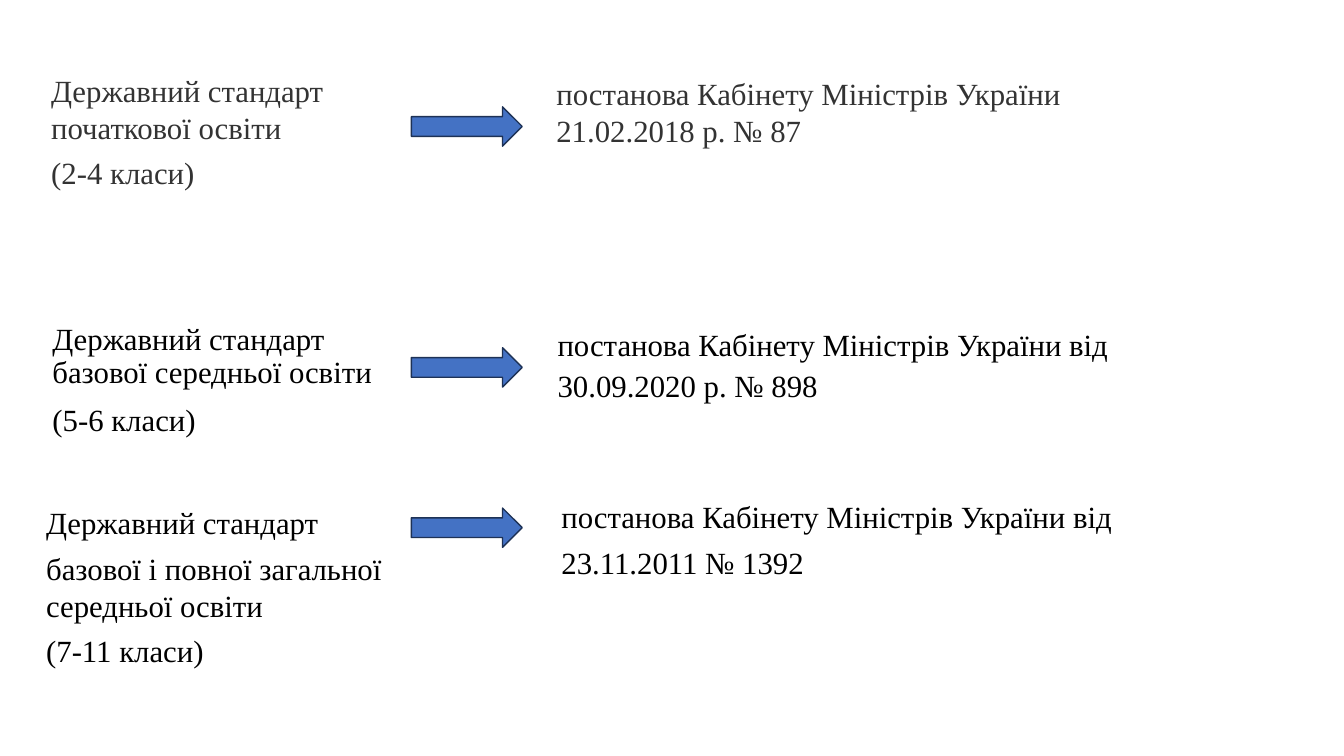
from dataclasses import dataclass

from pptx import Presentation
from pptx import util as u
from pptx.dml.color import RGBColor
from pptx.enum import shapes, text
from pptx.oxml.xmlchemy import OxmlElement

FONT = "Times New Roman"
HEX = {"grey": "333333", "black": "000000", "blue": "4472C4", "navy": "1E3256"}


@dataclass
class Block:
    at: tuple[float, float, float, float]
    lines: list[str]


@dataclass
class Row:
    level: Block
    act: Block
    arrow: float
    color: str = "black"
    main: bool = False


ROWS = [
    Row(
        Block((0.41, 0.66, 4.23, 1.3),
              ["Державний стандарт початкової освіти", "(2-4 класи)"]),
        Block((5.42, 0.69, 7.2, 0.84),
              ["постанова Кабінету Міністрів України\n21.02.2018 р. № 87"]),
        1.06, color="grey"),
    Row(
        Block((0.42, 2.95, 3.42, 1.66),
              ["Державний стандарт базової середньої освіти", "(5-6 класи)"]),
        Block((5.43, 3.04, 7.41, 1.2),
              ["постанова Кабінету Міністрів України від", "30.09.2020 р. № 898"]),
        3.45, main=True),
    Row(
        Block((0.36, 4.95, 4.1, 1.75),
              ["Державний стандарт", "базової і повної загальної середньої освіти",
               "(7-11 класи)"]),
        Block((5.47, 4.89, 6.93, 0.93),
              ["постанова Кабінету Міністрів України від", "23.11.2011 № 1392"]),
        5.04),
]


def place(shape, at: tuple) -> None:
    shape.left, shape.top, shape.width, shape.height = map(u.Inches, at)


def write(shape, lines: list[str], *, color: str = "black", size: float = 22,
          ratio: float = 1.0, before: float = 0, after: float = 6,
          anchor=text.MSO_ANCHOR.TOP) -> None:
    """Fill a shape with left-aligned, unbulleted paragraphs."""
    frame = shape.text_frame
    frame.word_wrap = True
    frame.auto_size = text.MSO_AUTO_SIZE.NONE
    frame.vertical_anchor = anchor
    for i, line in enumerate(lines):
        para = frame.add_paragraph() if i else frame.paragraphs[0]
        para.text = line
        para.alignment = text.PP_ALIGN.LEFT
        para.line_spacing = ratio
        para.space_before, para.space_after = u.Pt(before), u.Pt(after)
        props = para._p.get_or_add_pPr()
        props.set("marL", "0")
        props.set("indent", "0")
        props.append(OxmlElement("a:buNone"))
        for run in para.runs:
            run.font.name, run.font.size = FONT, u.Pt(size)
            run.font.color.rgb = RGBColor.from_string(HEX[color])


def arrow(slide, top: float) -> None:
    shape = slide.shapes.add_shape(
        shapes.MSO_SHAPE.RIGHT_ARROW, *map(u.Inches, (4.08, top, 1.1, 0.39)))
    shape.shadow.inherit = False
    shape.fill.solid()
    shape.fill.fore_color.rgb = RGBColor.from_string(HEX["blue"])
    shape.line.color.rgb = RGBColor.from_string(HEX["navy"])
    shape.line.width = u.Pt(1)


def draw(slide, row: Row) -> None:
    """Put the main row in the placeholders, any other row in text boxes."""
    if row.main:
        mid = text.MSO_ANCHOR.MIDDLE
        title, body = slide.shapes.title, slide.placeholders[1]
        place(title, row.level.at)
        place(body, row.act.at)
        write(title, row.level.lines, color=row.color, ratio=0.9,
              before=10, after=0, anchor=mid)
        write(body, row.act.lines, color=row.color, ratio=0.9, anchor=mid)
    else:
        for block in (row.level, row.act):
            box = slide.shapes.add_textbox(*map(u.Inches, block.at))
            write(box, block.lines, color=row.color)
    arrow(slide, row.arrow)


def main() -> None:
    deck = Presentation()
    deck.slide_width, deck.slide_height = u.Inches(13.33), u.Inches(7.5)
    slide = deck.slides.add_slide(deck.slide_layouts[1])
    for row in ROWS:
        draw(slide, row)
    deck.save("out.pptx")


if __name__ == "__main__":
    main()
